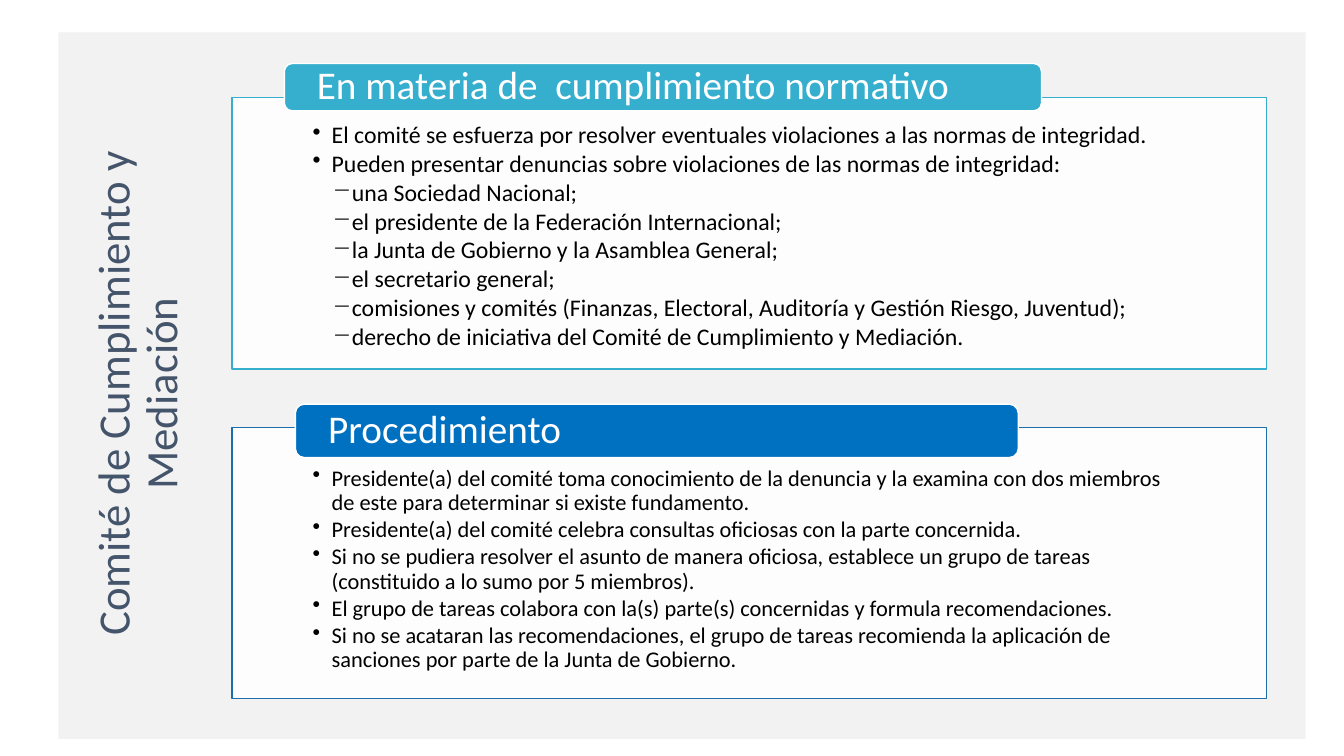
from dataclasses import dataclass

from lxml.etree import SubElement
from pptx import Presentation
from pptx.dml.color import RGBColor
from pptx.enum.shapes import MSO_SHAPE
from pptx.enum.text import MSO_ANCHOR, PP_ALIGN
from pptx.oxml.ns import qn
from pptx.util import Emu, Pt


@dataclass(frozen=True)
class Theme:
    face: str = "Calibri"
    back: str = "F2F2F2"
    white: str = "FFFFFF"
    ink: str = "000000"
    slate: str = "44546A"
    aqua: str = "36AFCE"
    blue: str = "0070C0"
    edge: str = "1D6FA9"
    title: int = 32
    head: int = 28
    rules: int = 17
    steps: int = 16


THEME = Theme()
SCALE = 9144

RULES = [
    (1, "El comité se esfuerza por resolver eventuales violaciones a las normas de integridad."),
    (1, "Pueden presentar denuncias sobre violaciones de las normas de integridad:"),
    (2, "una Sociedad Nacional;"),
    (2, "el presidente de la Federación Internacional;"),
    (2, "la Junta de Gobierno y la Asamblea General;"),
    (2, "el secretario general;"),
    (2, "comisiones y comités (Finanzas, Electoral, Auditoría y Gestión Riesgo, Juventud);"),
    (2, "derecho de iniciativa del Comité de Cumplimiento y Mediación."),
]
STEPS = [
    (1, "Presidente(a) del comité toma conocimiento de la denuncia y la examina con dos miembros "
        "de este para determinar si existe fundamento."),
    (1, "Presidente(a) del comité celebra consultas oficiosas con la parte concernida."),
    (1, "Si no se pudiera resolver el asunto de manera oficiosa, establece un grupo de tareas "
        "(constituido a lo sumo por 5 miembros)."),
    (1, "El grupo de tareas colabora con la(s) parte(s) concernidas y formula recomendaciones."),
    (1, "Si no se acataran las recomendaciones, el grupo de tareas recomienda la aplicación de "
        "sanciones por parte de la Junta de Gobierno."),
]


def px(count):
    return Emu(count * SCALE)


def paint(slide, kind, box, fill, line=None):
    shape = slide.shapes.add_shape(kind, *map(px, box))
    shape.shadow.inherit = False
    shape.fill.solid()
    shape.fill.fore_color.rgb = RGBColor.from_string(fill)
    if line:
        shape.line.color.rgb = RGBColor.from_string(line)
        shape.line.width = Pt(1)
    else:
        shape.line.fill.background()
    return shape


def inset(frame, left, top, right, low, anchor):
    frame.word_wrap = True
    frame.margin_left, frame.margin_top = px(left), px(top)
    frame.margin_right, frame.margin_bottom = px(right), px(low)
    frame.vertical_anchor = anchor


def write(para, text, size, color, align=PP_ALIGN.LEFT, lead=0.9):
    para.text = text
    para.alignment = align
    para.line_spacing = lead
    para.font.name = THEME.face
    para.font.size = Pt(size)
    para.font.color.rgb = RGBColor.from_string(color)


def bullet(para, level):
    para.level = level
    para.space_after = Pt(2.25)
    props = para._p.get_or_add_pPr()
    props.set("marL", str(px(19 if level == 1 else 39)))
    props.set("indent", str(px(-19)))
    SubElement(props, qn("a:buChar"), char="•" if level == 1 else "─")


def panel(slide, box, items, size, top, edge):
    shape = paint(slide, MSO_SHAPE.RECTANGLE, box, THEME.white, edge)
    tint = shape.fill._xPr.find(qn("a:solidFill"))[0]
    SubElement(tint, qn("a:alpha"), val="90000")
    frame = shape.text_frame
    inset(frame, 80, top, 80, 3, MSO_ANCHOR.TOP)
    for spot, (level, text) in enumerate(items):
        para = frame.add_paragraph() if spot else frame.paragraphs[0]
        bullet(para, level)
        write(para, text, size, THEME.ink)


def header(slide, box, text, fill):
    shape = paint(slide, MSO_SHAPE.ROUNDED_RECTANGLE, box, fill, THEME.white)
    inset(shape.text_frame, 30, 0, 30, 0, MSO_ANCHOR.MIDDLE)
    write(shape.text_frame.paragraphs[0], text, THEME.head, THEME.white)


def section(slide, box, tab, title, items, size, top, fill, edge):
    left, high, wide, tall = box
    dx, dy, span, rise = tab
    panel(slide, box, items, size, top, edge)
    header(slide, (left + dx, high + dy, span, rise), title, fill)


def label(slide, box, text):
    frame = slide.shapes.add_textbox(*map(px, box)).text_frame
    inset(frame, 7, 4, 7, 4, MSO_ANCHOR.MIDDLE)
    frame._txBody.bodyPr.set("vert", "vert270")
    write(frame.paragraphs[0], text, THEME.title, THEME.slate, PP_ALIGN.CENTER, 0.89)


def main():
    deck = Presentation()
    deck.slide_width, deck.slide_height = px(1333), px(750)
    slide = deck.slides.add_slide(deck.slide_layouts[6])
    paint(slide, MSO_SHAPE.RECTANGLE, (58, 32, 1237, 701), THEME.back)
    section(slide, (230, 97, 1026, 269), (52, -34, 751, 47),
            "En materia de  cumplimiento normativo",
            RULES, THEME.rules, 25, THEME.aqua, THEME.aqua)
    section(slide, (230, 424, 1026, 269), (63, -23, 717, 53),
            "Procedimiento", STEPS, THEME.steps, 39, THEME.blue, THEME.edge)
    label(slide, (46, 88, 184, 605), "Comité de Cumplimiento y Mediación")
    deck.save("out.pptx")


if __name__ == "__main__":
    main()
